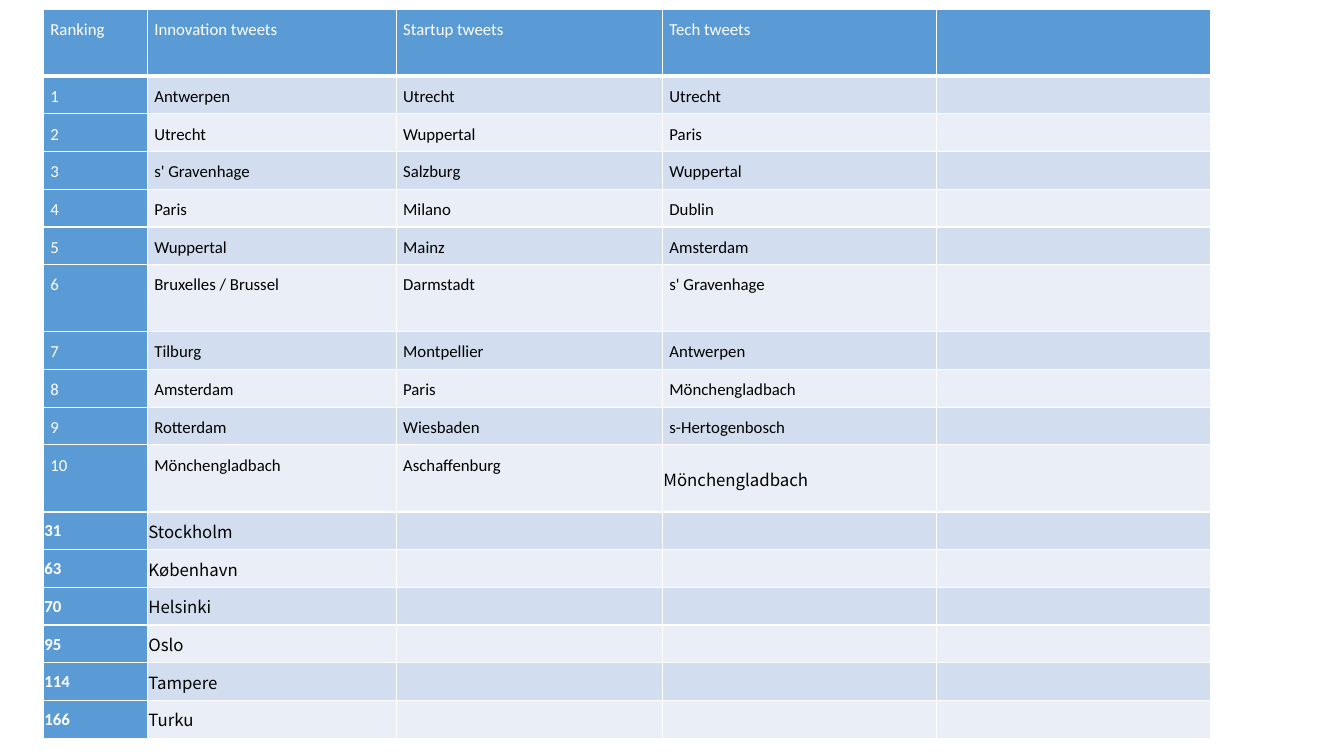
from lxml import etree
from pptx import Presentation
from pptx.dml.color import RGBColor
from pptx.enum import text
from pptx.oxml import ns
from pptx.util import Cm, Pt

HEADER = ["Ranking", "Innovation tweets", "Startup tweets", "Tech tweets", ""]
TOP_TEN = [
    ("Antwerpen", "Utrecht", "Utrecht"),
    ("Utrecht", "Wuppertal", "Paris"),
    ("s' Gravenhage", "Salzburg", "Wuppertal"),
    ("Paris", "Milano", "Dublin"),
    ("Wuppertal", "Mainz", "Amsterdam"),
    ("Bruxelles / Brussel", "Darmstadt", "s' Gravenhage"),
    ("Tilburg", "Montpellier", "Antwerpen"),
    ("Amsterdam", "Paris", "Mönchengladbach"),
    ("Rotterdam", "Wiesbaden", "s-Hertogenbosch"),
    ("Mönchengladbach", "Aschaffenburg", "Mönchengladbach"),
]
NORDIC = [
    ("31", "Stockholm"),
    ("63", "København"),
    ("70", "Helsinki"),
    ("95", "Oslo"),
    ("114", "Tampere"),
    ("166", "Turku"),
]
ROWS = [HEADER]
ROWS += [(str(rank), *cities, "") for rank, cities in enumerate(TOP_TEN, 1)]
ROWS += [(rank, city, "", "", "") for rank, city in NORDIC]

COL_WIDTHS = [2.62, 6.27, 6.71, 6.91, 6.91]
ROW_HEIGHT, TALL_HEIGHT = 0.95, 1.69
TALL_ROWS = {0, 6, 10}
LAST_RANKED = len(TOP_TEN)
COMPACT_CELL = (10, 3)

BLUE = RGBColor(0x5B, 0x9B, 0xD5)
BAND_DARK = RGBColor(0xD2, 0xDE, 0xEF)
BAND_LIGHT = RGBColor(0xEA, 0xEF, 0xF7)
WHITE = RGBColor(0xFF, 0xFF, 0xFF)
BLACK = RGBColor(0x00, 0x00, 0x00)


def write(cell, value, *, color, font="Calibri", bold=False, compact=False):
    side = Cm(0.02 if compact else 0.17)
    cell.margin_left = cell.margin_right = side
    cell.margin_top = Cm(0.02 if compact else 0)
    cell.margin_bottom = 0
    cell.vertical_anchor = text.MSO_ANCHOR.MIDDLE if compact else text.MSO_ANCHOR.TOP
    if not value:
        return
    p = cell.text_frame.paragraphs[0]
    p.alignment = text.PP_ALIGN.JUSTIFY
    p.line_spacing = 1.0 if compact else 1.5
    r = p.add_run()
    r.text = value
    r.font.name = font
    r.font.size = Pt(12)
    r.font.bold = bold
    r.font.color.rgb = color


def add_borders(cell, bottom):
    tc_pr = cell._tc.get_or_add_tcPr()
    widths = {"lnL": 1, "lnR": 1, "lnT": 1, "lnB": bottom}
    for i, (tag, width) in enumerate(widths.items()):
        ln = etree.Element(ns.qn(f"a:{tag}"), w=str(Pt(width)))
        fill = etree.SubElement(ln, ns.qn("a:solidFill"))
        etree.SubElement(fill, ns.qn("a:srgbClr"), val=str(WHITE))
        tc_pr.insert(i, ln)


def main():
    prs = Presentation()
    prs.slide_width, prs.slide_height = Cm(33.87), Cm(19.05)
    s = prs.slides.add_slide(prs.slide_layouts[6])

    heights = [TALL_HEIGHT if i in TALL_ROWS else ROW_HEIGHT for i in range(len(ROWS))]
    table = s.shapes.add_table(
        len(ROWS), len(COL_WIDTHS), Cm(1.1), Cm(0.23), Cm(sum(COL_WIDTHS)), Cm(sum(heights))
    ).table
    table.first_col = True
    for col, width in zip(table.columns, COL_WIDTHS):
        col.width = Cm(width)

    for i, values in enumerate(ROWS):
        table.rows[i].height = Cm(heights[i])
        for j, value in enumerate(values):
            cell = table.cell(i, j)
            heading = i == 0 or j == 0
            compact = i > LAST_RANKED or (i, j) == COMPACT_CELL
            write(
                cell,
                value,
                color=WHITE if heading else BLACK,
                font="Noto Sans CJK KR" if compact and not heading else "Calibri",
                bold=compact and heading,
                compact=compact,
            )
            cell.fill.solid()
            band = BAND_DARK if i % 2 else BAND_LIGHT
            cell.fill.fore_color.rgb = BLUE if heading else band
            add_borders(cell, bottom=3 if i == 0 else 1)

    prs.save("out.pptx")


if __name__ == "__main__":
    main()
